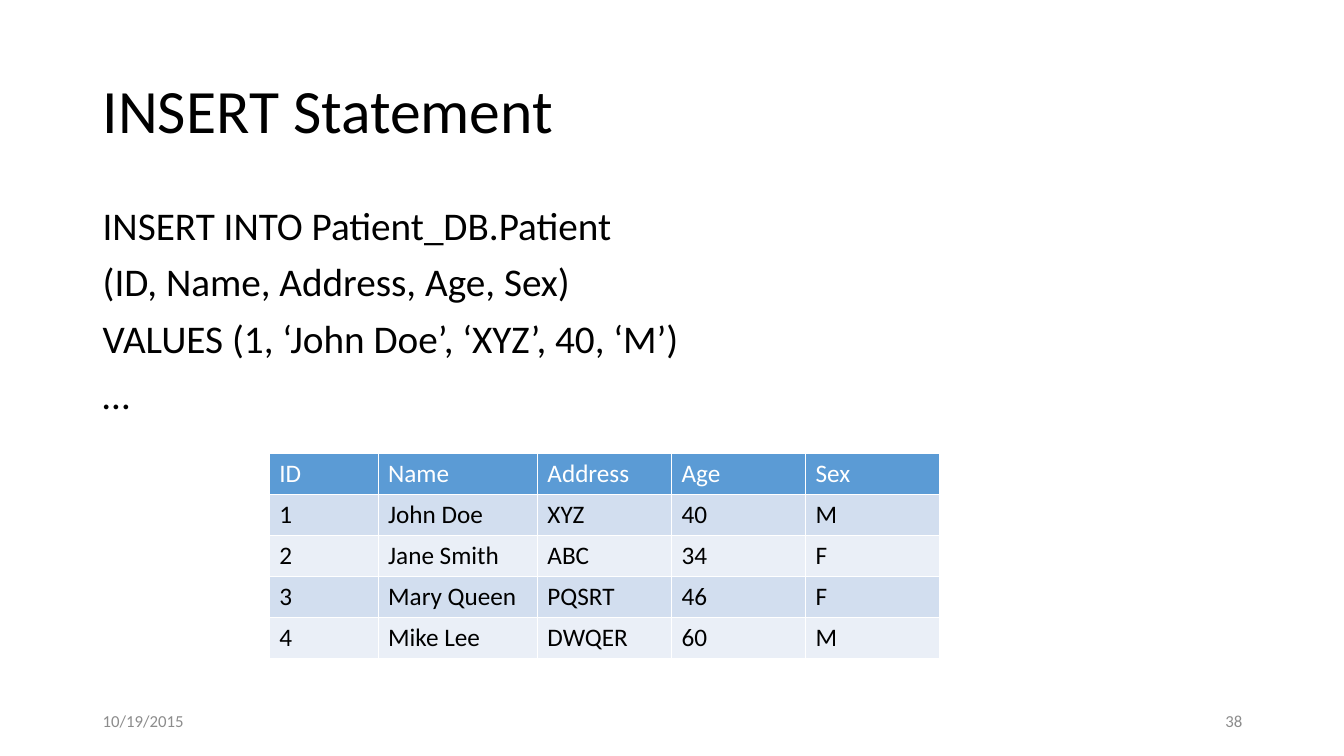
from pptx import Presentation
from pptx import util as u
from pptx.dml.color import RGBColor
from pptx.enum import text

ANCHOR = text.MSO_ANCHOR
ALIGN = text.PP_ALIGN


def color(hex_string):
    return RGBColor.from_string(hex_string)


def add_text(slide, box, lines, size, hex_string, anchor=ANCHOR.MIDDLE,
             align=ALIGN.LEFT, line_spacing=1.0, space_before=0):
    shape = slide.shapes.add_textbox(*[u.Inches(value) for value in box])
    frame = shape.text_frame
    frame.word_wrap = True
    frame.vertical_anchor = anchor
    frame.text = "\n".join(lines)
    for paragraph in frame.paragraphs:
        paragraph.alignment = align
        paragraph.line_spacing = line_spacing
        paragraph.space_before = u.Pt(space_before)
        paragraph.font.name = "Calibri"
        paragraph.font.size = u.Pt(size)
        paragraph.font.color.rgb = color(hex_string)


presentation = Presentation()
presentation.slide_width = u.Inches(13.33)
presentation.slide_height = u.Inches(7.5)
slide = presentation.slides.add_slide(presentation.slide_layouts[6])

add_text(slide, (0.92, 0.4, 11.5, 1.45), ["INSERT Statement"], 44, "000000",
         line_spacing=0.9)

statement = [
    "INSERT INTO Patient_DB.Patient",
    "(ID, Name, Address, Age, Sex)",
    "VALUES (1, ‘John Doe’, ‘XYZ’, 40, ‘M’)",
    "…",
]
add_text(slide, (0.92, 2, 11.5, 4.76), statement, 28, "000000",
         anchor=ANCHOR.TOP, line_spacing=0.9, space_before=10)

add_text(slide, (0.92, 6.95, 3, 0.4), ["10/19/2015"], 12, "8C8C8C")
add_text(slide, (9.42, 6.95, 3, 0.4), ["38"], 12, "8C8C8C", align=ALIGN.RIGHT)

patients = [
    ("ID", "Name", "Address", "Age", "Sex"),
    ("1", "John Doe", "XYZ", "40", "M"),
    ("2", "Jane Smith", "ABC", "34", "F"),
    ("3", "Mary Queen", "PQSRT", "46", "F"),
    ("4", "Mike Lee", "DWQER", "60", "M"),
]
column_widths = [1.08, 1.58, 1.33, 1.33, 1.33]
table = slide.shapes.add_table(
    len(patients), len(column_widths), u.Inches(2.67), u.Inches(4.5),
    u.Inches(sum(column_widths)), u.Inches(2.03)).table
for column, width in zip(table.columns, column_widths):
    column.width = u.Inches(width)

for row_index, patient in enumerate(patients):
    if row_index == 0:
        fill_color, font_color = "5B9BD5", "FFFFFF"
    else:
        fill_color = "D2DEEF" if row_index % 2 else "EAEFF7"
        font_color = "000000"
    for column_index, value in enumerate(patient):
        cell = table.cell(row_index, column_index)
        cell.text = value
        cell.fill.solid()
        cell.fill.fore_color.rgb = color(fill_color)
        paragraph = cell.text_frame.paragraphs[0]
        paragraph.font.name = "Calibri"
        paragraph.font.size = u.Pt(18)
        paragraph.font.bold = False
        paragraph.font.color.rgb = color(font_color)

presentation.save("out.pptx")
